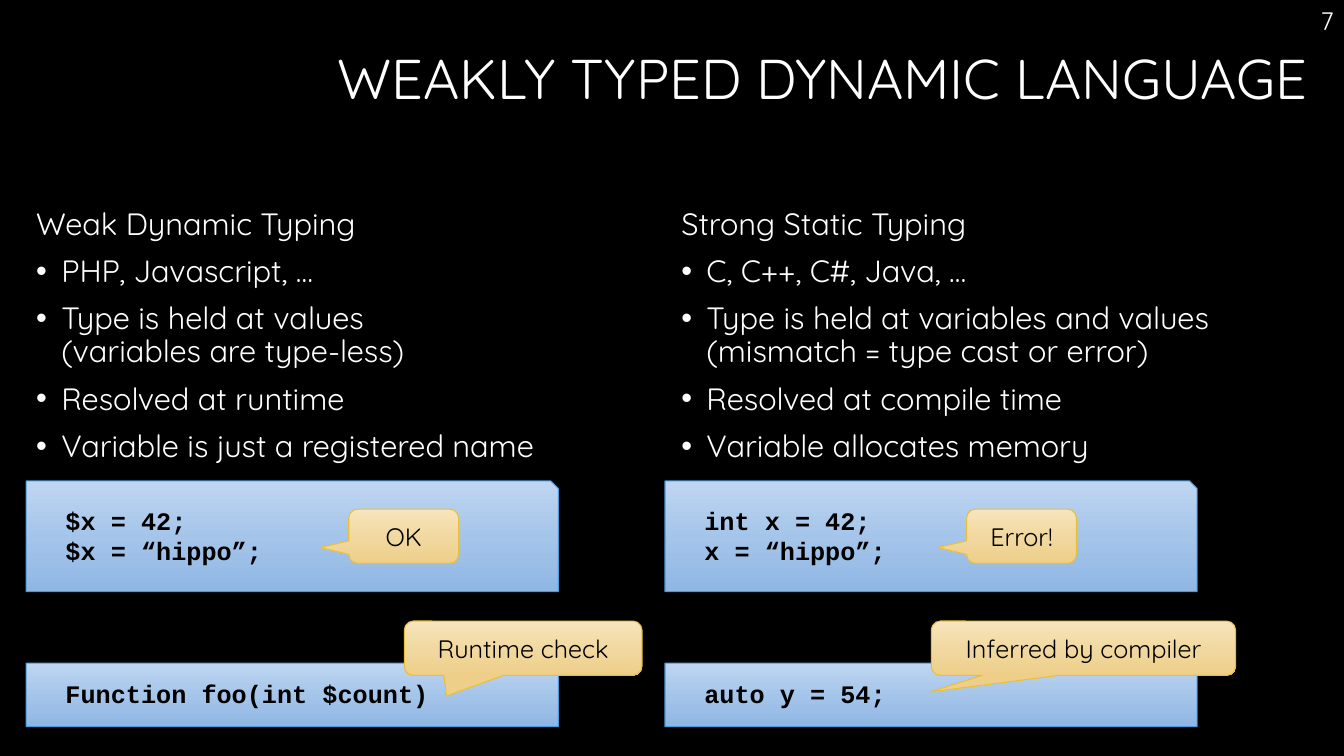
from copy import deepcopy
from dataclasses import dataclass

from lxml.etree import SubElement
from pptx import Presentation
from pptx.dml.color import RGBColor
from pptx.enum.shapes import MSO_SHAPE
from pptx.enum.text import MSO_ANCHOR, MSO_AUTO_SIZE, PP_ALIGN
from pptx.oxml.ns import qn
from pptx.util import Cm, Pt


@dataclass(frozen=True)
class Theme:
    """Colours, fonts and type sizes of the slide."""
    background: str = "000000"
    light: str = "FFFFFF"
    dark: str = "000000"
    code_fill: tuple = ("BFD6F2", "A4C4E9", "8FB7E4")
    code_edge: str = "4A9BDC"
    note_fill: tuple = ("F8E5BD", "F1D8A0", "EECF89")
    note_edge: str = "E9BF35"
    sans: str = "Quicksand"
    mono: str = "Courier New"
    title_size: int = 40
    list_size: int = 22
    small_size: int = 18


THEME = Theme()
MARGIN = 0.66
LIST_SPACING = {"line_spacing": 0.9, "space_before": Pt(10)}
TITLE_FRAME = {"vertical_anchor": MSO_ANCHOR.TOP, "auto_size": MSO_AUTO_SIZE.NONE,
               "word_wrap": True}
TITLE_LINE = {"alignment": PP_ALIGN.RIGHT, "line_spacing": 0.9}
CODE_FRAME = {"vertical_anchor": MSO_ANCHOR.MIDDLE, "margin_left": Cm(0.99),
              "margin_top": 0, "margin_right": Cm(0.25), "margin_bottom": Cm(0.13)}
NOTE_FRAME = {"vertical_anchor": MSO_ANCHOR.MIDDLE}

TYPING_LISTS = [
    (MARGIN, "Weak Dynamic Typing",
     ["PHP, Javascript, …", "Type is held at values\v(variables are type-less)",
      "Resolved at runtime", "Variable is just a registered name"]),
    (16.92, "Strong Static Typing",
     ["C, C++, C#, Java, …",
      "Type is held at variables and values\v(mismatch = type cast or error)",
      "Resolved at compile time", "Variable allocates memory"]),
]
CODE_COLUMNS = [MARGIN, 16.76]
CODE_ROWS = [
    (12.12, 2.79, [["$x = 42;", "$x = “hippo”;"], ["int x = 42;", "x = “hippo”;"]]),
    (16.71, 1.6, [["Function foo(int $count)"], ["auto y = 54;"]]),
]
CALLOUTS = [
    ("OK", 8.79, 12.83, 2.77, (-0.759, 0.207)),
    ("Error!", 24.36, 12.83, 2.77, (-0.759, 0.207)),
    ("Runtime check", 10.19, 15.65, 5.99, (-0.322, 0.878)),
    ("Inferred by compiler", 23.47, 15.65, 7.67, (-0.505, 0.806)),
]


def apply_format(target, values):
    """Set each attribute in values on target."""
    for name, value in values.items():
        setattr(target, name, value)


def write_lines(frame, lines, font, color, paragraph_format):
    """Fill a text frame with equally formatted paragraphs."""
    for index, line in enumerate(lines):
        paragraph = frame.add_paragraph() if index else frame.paragraphs[0]
        paragraph.text = line
        apply_format(paragraph, paragraph_format)
        for run in paragraph.runs:
            apply_format(run.font, font)
            run.font.color.rgb = RGBColor.from_string(color)


def sans_font(size):
    """Return the format values for sans text."""
    return {"name": THEME.sans, "size": Pt(size)}


def add_bullet(paragraph):
    """Give a paragraph a hanging round bullet."""
    properties = paragraph._p.get_or_add_pPr()
    properties.set("marL", str(Cm(0.635)))
    properties.set("indent", str(-Cm(0.635)))
    color = SubElement(properties, qn("a:buClr"))
    SubElement(color, qn("a:srgbClr"), val=THEME.light)
    SubElement(properties, qn("a:buFont"), typeface="Arial")
    SubElement(properties, qn("a:buChar"), char="•")


def paint_panel(panel, fill_colors, edge_color):
    """Apply a vertical three-stop gradient and a thin edge."""
    panel.shadow.inherit = False
    panel.fill.gradient()
    panel.fill.gradient_angle = 270
    stops = panel._element.spPr.find(qn("a:gradFill")).find(qn("a:gsLst"))
    stops.insert(1, deepcopy(stops[0]))
    for stop, position, color in zip(panel.fill.gradient_stops, (0, 0.52, 1), fill_colors):
        stop.position = position
        stop.color.rgb = RGBColor.from_string(color)
    panel.line.color.rgb = RGBColor.from_string(edge_color)
    panel.line.width = Pt(0.75)


def set_title(slide, wording):
    """Place and format the title placeholder."""
    title = slide.shapes.title
    apply_format(title, {"left": Cm(MARGIN), "top": Cm(1.17),
                         "width": Cm(32.54), "height": Cm(3.58)})
    apply_format(title.text_frame, TITLE_FRAME)
    write_lines(title.text_frame, [wording], sans_font(THEME.title_size),
                THEME.light, TITLE_LINE)


def add_page_number(slide, number):
    """Add the page number in the top right corner."""
    frame = slide.shapes.add_textbox(Cm(26.54), 0, Cm(7.32), Cm(1.02)).text_frame
    apply_format(frame, {"word_wrap": True, "vertical_anchor": MSO_ANCHOR.MIDDLE})
    write_lines(frame, [number], sans_font(THEME.small_size), THEME.light,
                {"alignment": PP_ALIGN.RIGHT})


def add_typing_list(slide, left, heading, points):
    """Add a heading with its bulleted points."""
    frame = slide.shapes.add_textbox(Cm(left), Cm(5.13), Cm(16.26), Cm(7.01)).text_frame
    frame.word_wrap = True
    write_lines(frame, [heading, *points], sans_font(THEME.list_size),
                THEME.light, LIST_SPACING)
    for point in frame.paragraphs[1:]:
        add_bullet(point)


def add_code(slide, left, top, height, lines):
    """Add a code panel with one snipped corner."""
    panel = slide.shapes.add_shape(MSO_SHAPE.SNIP_1_RECTANGLE, Cm(left), Cm(top),
                                   Cm(13.41), Cm(height))
    panel.adjustments[0] = 0.068
    paint_panel(panel, THEME.code_fill, THEME.code_edge)
    apply_format(panel.text_frame, CODE_FRAME)
    font = {"name": THEME.mono, "size": Pt(THEME.small_size), "bold": True}
    write_lines(panel.text_frame, lines, font, THEME.dark, {"alignment": PP_ALIGN.LEFT})


def add_callout(slide, wording, left, top, width, tip):
    """Add a rounded callout whose tip is relative to its centre."""
    callout = slide.shapes.add_shape(MSO_SHAPE.ROUNDED_RECTANGULAR_CALLOUT, Cm(left),
                                     Cm(top), Cm(width), Cm(1.37))
    for index, value in enumerate((*tip, 0.167)):
        callout.adjustments[index] = value
    paint_panel(callout, THEME.note_fill, THEME.note_edge)
    apply_format(callout.text_frame, NOTE_FRAME)
    write_lines(callout.text_frame, [wording], sans_font(THEME.small_size),
                THEME.dark, {"alignment": PP_ALIGN.CENTER})


def main():
    """Build and save the slide."""
    deck = Presentation()
    apply_format(deck, {"slide_width": Cm(33.87), "slide_height": Cm(19.05)})
    slide = deck.slides.add_slide(deck.slide_layouts.get_by_name("Title Only"))
    slide.background.fill.solid()
    slide.background.fill.fore_color.rgb = RGBColor.from_string(THEME.background)
    set_title(slide, "WEAKLY TYPED DYNAMIC LANGUAGE")
    add_page_number(slide, "7")
    for left, heading, points in TYPING_LISTS:
        add_typing_list(slide, left, heading, points)
    for top, height, snippets in CODE_ROWS:
        for left, lines in zip(CODE_COLUMNS, snippets):
            add_code(slide, left, top, height, lines)
    for callout in CALLOUTS:
        add_callout(slide, *callout)
    deck.save("out.pptx")


if __name__ == "__main__":
    main()
